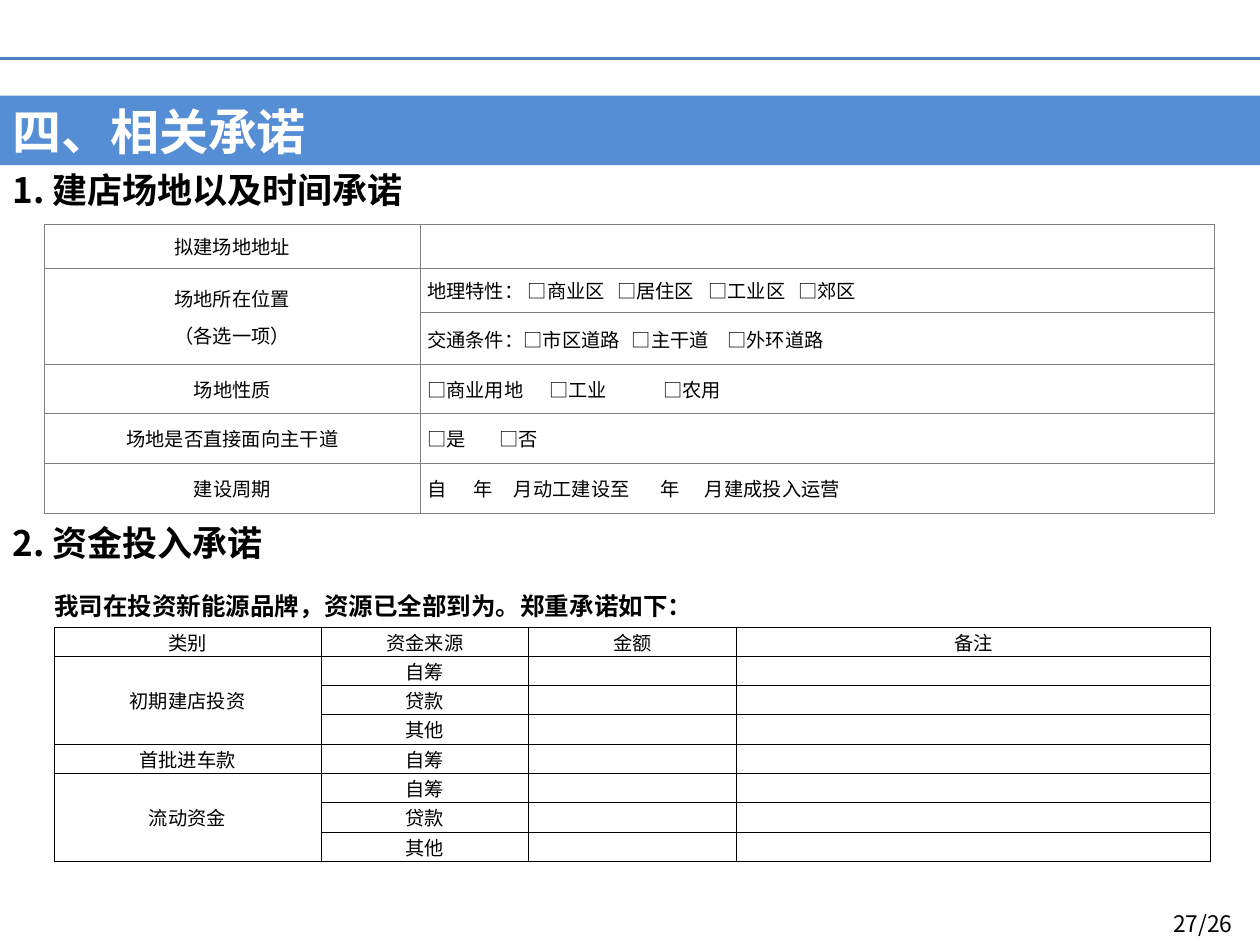
from dataclasses import dataclass
from itertools import groupby

from lxml.etree import SubElement
from pptx import Presentation
from pptx.dml.color import RGBColor
from pptx.enum.shapes import MSO_CONNECTOR, MSO_SHAPE
from pptx.enum.text import MSO_ANCHOR, PP_ALIGN
from pptx.oxml.ns import qn
from pptx.util import Cm, Pt


@dataclass(frozen=True)
class Theme:
    font: str = "Noto Sans CJK SC"
    black: str = "000000"
    white: str = "FFFFFF"
    grey: str = "808080"
    rule: str = "4F81BD"
    banner: str = "558ED5"
    title: int = 28
    heading: int = 20
    statement: int = 14
    page: int = 13
    body: int = 11


@dataclass(frozen=True)
class Tabbed:
    """A line whose gaps are tabs; blanks to fill in are underlined."""
    text: str
    stops: tuple
    underlined: bool = False


class SlideBuilder:
    def __init__(self, slide, theme):
        self.slide = slide
        self.theme = theme

    def style(self, paragraph, size, color=None, bold=False, align=PP_ALIGN.LEFT):
        paragraph.alignment = align
        font = paragraph.font
        font.name = self.theme.font
        font.size = Pt(size)
        font.bold = bold
        font.color.rgb = RGBColor.from_string(color or self.theme.black)

    def rule(self, top, width):
        line = self.slide.shapes.add_connector(
            MSO_CONNECTOR.STRAIGHT, Cm(0), Cm(top), Cm(width), Cm(top))
        line.line.color.rgb = RGBColor.from_string(self.theme.rule)
        line.line.width = Pt(1.5)
        SubElement(line._element.spPr, qn("a:effectLst"))

    def banner(self, text, left, top, width, height):
        shape = self.slide.shapes.add_shape(
            MSO_SHAPE.RECTANGLE, Cm(left), Cm(top), Cm(width), Cm(height))
        shape.shadow.inherit = False
        shape.fill.solid()
        shape.fill.fore_color.rgb = RGBColor.from_string(self.theme.banner)
        shape.line.fill.background()
        frame = shape.text_frame
        frame.margin_top = frame.margin_bottom = 0
        frame.vertical_anchor = MSO_ANCHOR.MIDDLE
        frame.text = text
        self.style(frame.paragraphs[0], self.theme.title, self.theme.white, bold=True)

    def text(self, text, left, top, width, height, size, bold=False,
             align=PP_ALIGN.LEFT, anchor=MSO_ANCHOR.TOP):
        box = self.slide.shapes.add_textbox(Cm(left), Cm(top), Cm(width), Cm(height))
        frame = box.text_frame
        frame.word_wrap = True
        frame.margin_top = frame.margin_bottom = 0
        frame.vertical_anchor = anchor
        frame.text = text
        self.style(frame.paragraphs[0], size, bold=bold, align=align)

    def table(self, rows, left, top, widths, heights, merges, border, margin):
        table = self.slide.shapes.add_table(
            len(rows), len(widths), Cm(left), Cm(top),
            Cm(sum(widths)), Cm(sum(heights))).table
        table.first_row = table.horz_banding = False
        for column, width in zip(table.columns, widths):
            column.width = Cm(width)
        for row, height in zip(table.rows, heights):
            row.height = Cm(height)
        for row_index, row in enumerate(rows):
            for column_index, content in enumerate(row):
                cell = table.cell(row_index, column_index)
                cell.margin_left = cell.margin_right = Cm(margin)
                cell.margin_top = cell.margin_bottom = Cm(margin)
                cell.vertical_anchor = MSO_ANCHOR.MIDDLE
                self.borders(cell, "LRTB", *border)
                cell.fill.background()
                self.fill_cell(cell, content)
        for first, last in merges:
            table.cell(*first).merge(table.cell(*last))
        return table

    def fill_cell(self, cell, content):
        frame = cell.text_frame
        if isinstance(content, Tabbed):
            self.tabbed(frame.paragraphs[0], content)
            return
        frame.text = content
        for index, paragraph in enumerate(frame.paragraphs):
            if index:
                paragraph.space_before = Pt(self.theme.body / 2)
            self.style(paragraph, self.theme.body, align=PP_ALIGN.CENTER)
            if not content:  # keeps empty rows at their set height
                SubElement(paragraph._p, qn("a:endParaRPr"), sz=str(self.theme.body * 100))

    def tabbed(self, paragraph, line):
        tabs = SubElement(paragraph._p.get_or_add_pPr(), qn("a:tabLst"))
        for stop in line.stops:
            SubElement(tabs, qn("a:tab"), pos=str(int(Cm(stop))), algn="l")
        for is_tab, characters in groupby(line.text, lambda character: character == "\t"):
            run = paragraph.add_run()
            run.text = "".join(characters)
            if is_tab and line.underlined:
                run.font.underline = True
        self.style(paragraph, self.theme.body)

    def borders(self, cell, sides, color, width):
        properties = cell._tc.get_or_add_tcPr()
        for side in sides:
            line = SubElement(properties, qn(f"a:ln{side}"), w=str(int(Pt(width))))
            if color:
                fill = SubElement(line, qn("a:solidFill"))
                SubElement(fill, qn("a:srgbClr"), val=color)
            else:
                SubElement(line, qn("a:noFill"))

    def open_row(self, table):
        """Leaves the first row of a table with its bottom border only."""
        for cell in table.rows[0].cells:
            properties = cell._tc.tcPr
            for side in "LRT":
                line = properties.find(qn(f"a:ln{side}"))
                line.remove(line[0])
                SubElement(line, qn("a:noFill"))


def main():
    presentation = Presentation()
    presentation.slide_width, presentation.slide_height = Cm(25.4), Cm(19.05)
    slide = presentation.slides.add_slide(presentation.slide_layouts[6])
    theme = Theme()
    builder = SlideBuilder(slide, theme)

    # Header and page number
    builder.rule(1.18, 25.4)
    builder.banner("四、相关承诺", 0, 1.93, 25.4, 1.4)
    builder.text("27/26", 22.61, 18.11, 3.28, 1.02, theme.page,
                 align=PP_ALIGN.CENTER, anchor=MSO_ANCHOR.MIDDLE)

    # Section headings
    for heading, top in (("1. 建店场地以及时间承诺", 3.4), ("2. 资金投入承诺", 10.52)):
        builder.text(heading, 0, top, 25.4, 1.12, theme.heading, bold=True)

    # Site and schedule
    site_rows = [
        ("拟建场地地址", ""),
        ("场地所在位置\n（各选一项）",
         Tabbed("地理特性：\t□商业区\t□居住区\t□工业区\t□郊区", (2.03, 3.83, 5.67, 7.48))),
        ("", Tabbed("交通条件：□市区道路\t□主干道\t□外环道路", (4.13, 6.05))),
        ("场地性质", Tabbed("□商业用地\t□工业\t□农用", (2.46, 4.76))),
        ("场地是否直接面向主干道", Tabbed("□是\t□否", (1.45,))),
        ("建设周期", Tabbed("自\t年\t月动工建设至\t年\t月建成投入运营",
                        (0.93, 1.75, 4.7, 5.6), underlined=True)),
    ]
    builder.table(site_rows, 0.89, 4.52, (7.59, 16), (0.89, 0.89, 1.05, 0.97, 1.01, 1.01),
                  [((1, 0), (2, 0))], (theme.grey, 0.25), margin=0.13)

    # Funding
    sources = ("自筹", "贷款", "其他")
    groups = (("初期建店投资", sources), ("首批进车款", sources[:1]), ("流动资金", sources))
    funding_rows = [("我司在投资新能源品牌，资源已全部到为。郑重承诺如下：", "", "", ""),
                    ("类别", "资金来源", "金额", "备注")]
    merges = [((0, 0), (0, 3))]
    for category, group_sources in groups:
        start = len(funding_rows)
        for index, source in enumerate(group_sources):
            funding_rows.append(("" if index else category, source, "", ""))
        if len(group_sources) > 1:
            merges.append(((start, 0), (len(funding_rows) - 1, 0)))
    funding = builder.table(funding_rows, 1.09, 11.73, (5.38, 4.19, 4.19, 9.55),
                            [0.91] + [0.59] * 8, merges, (theme.black, 0.5), margin=0)
    builder.open_row(funding)
    statement = funding.cell(0, 0).text_frame.paragraphs[0]
    builder.style(statement, theme.statement, bold=True)

    presentation.save("out.pptx")


if __name__ == "__main__":
    main()
